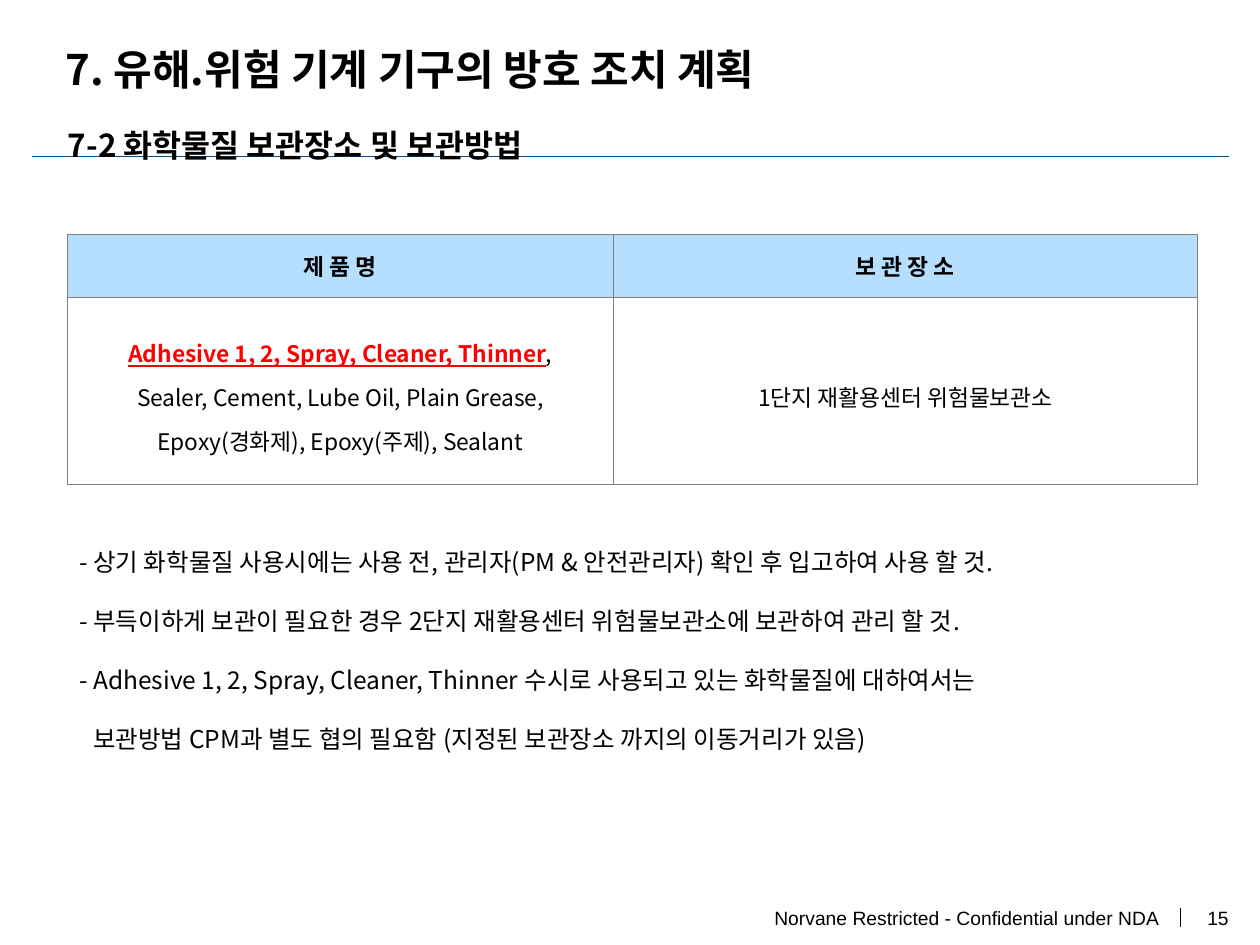
from lxml.etree import SubElement
from pptx import Presentation
from pptx.dml.color import RGBColor
from pptx.enum.shapes import MSO_CONNECTOR as Connector
from pptx.enum.text import MSO_ANCHOR as Anchor, PP_ALIGN as Align
from pptx.oxml.ns import qn
from pptx.util import Cm, Pt

COLORS = {"text": "000000", "rule": "005293", "header": "B6DFFF",
          "border": "808080", "alert": "FF0000"}
KOREAN = "Noto Sans CJK KR"


def style(paragraph, size, bold=False, align=Align.LEFT, spacing=None, name=KOREAN):
    paragraph.alignment = align
    if spacing:
        paragraph.line_spacing = spacing
    font = paragraph.font
    font.size, font.bold, font.name = Pt(size), bold, name
    font.color.rgb = RGBColor.from_string(COLORS["text"])
    properties = paragraph._p.find(".//" + qn("a:defRPr"))
    SubElement(properties, qn("a:ea"), typeface=name)


def add_text(slide, box, lines, size, **options):
    shape = slide.shapes.add_textbox(*[Cm(value) for value in box])
    frame = shape.text_frame
    frame.word_wrap = True
    frame.text = "\n".join(lines)
    for paragraph in frame.paragraphs:
        style(paragraph, size, **options)
    return frame


presentation = Presentation()
presentation.slide_width, presentation.slide_height = Cm(25.4), Cm(19.05)
slide = presentation.slides.add_slide(presentation.slide_layouts[5])

# Header rule and footer divider
for x1, y1, x2, y2, color, width in [
    (0.64, 3.15, 24.77, 3.15, "rule", 0.75),
    (23.8, 18.31, 23.8, 18.69, "text", 1),
]:
    line = slide.shapes.add_connector(Connector.STRAIGHT, Cm(x1), Cm(y1), Cm(x2), Cm(y2))
    line.line.color.rgb = RGBColor.from_string(COLORS[color])
    line.line.width = Pt(width)
    SubElement(line._element.spPr, qn("a:effectLst"))

# Title and subtitle
title = slide.shapes.title
title.left, title.top, title.width, title.height = Cm(1.07), Cm(0.74), Cm(16.87), Cm(1.3)
title.text_frame.text = "7. 유해.위험 기계 기구의 방호 조치 계획"
title.text_frame.vertical_anchor = Anchor.MIDDLE
style(title.text_frame.paragraphs[0], 24, bold=True)
add_text(slide, (1.12, 2.03, 16.81, 1.27), ["7-2 화학물질 보관장소 및 보관방법"],
         18, bold=True, spacing=1.5)

# Storage table
rows = [
    ["제 품 명", "보 관 장 소"],
    ["Adhesive 1, 2, Spray, Cleaner, Thinner,\n"
     "Sealer, Cement, Lube Oil, Plain Grease,\n"
     "Epoxy(경화제), Epoxy(주제), Sealant",
     "1단지 재활용센터 위험물보관소"],
]
table = slide.shapes.add_table(2, 2, Cm(1.35), Cm(4.72), Cm(22.78), Cm(5.05)).table
for column, width in zip(table.columns, (11.02, 11.76)):
    column.width = Cm(width)
for row, height in zip(table.rows, (1.27, 3.78)):
    row.height = Cm(height)

for row_index, texts in enumerate(rows):
    is_header = row_index == 0
    for column_index, text in enumerate(texts):
        cell = table.cell(row_index, column_index)
        cell.text = text
        cell.vertical_anchor = Anchor.MIDDLE
        for paragraph in cell.text_frame.paragraphs:
            style(paragraph, 13, bold=is_header, align=Align.CENTER,
                  spacing=None if is_header else Pt(25))
        # Borders come before the fill in the cell properties
        properties = cell._tc.get_or_add_tcPr()
        for side in ("lnL", "lnR", "lnT", "lnB"):
            border = SubElement(properties, qn(f"a:{side}"), w=str(Pt(0.25)))
            fill = SubElement(border, qn("a:solidFill"))
            SubElement(fill, qn("a:srgbClr"), val=COLORS["border"])
        if is_header:
            cell.fill.solid()
            cell.fill.fore_color.rgb = RGBColor.from_string(COLORS["header"])
        else:
            cell.fill.background()

# Highlighted products, with the closing comma left plain
products = table.cell(1, 0).text_frame.paragraphs[0]
highlight = products.runs[0]
highlight.text = highlight.text.rstrip(",")
highlight.font.bold = highlight.font.underline = True
highlight.font.color.rgb = RGBColor.from_string(COLORS["alert"])
products.add_run().text = ","

# Storage rules
notes = add_text(slide, (1.35, 10.31, 22.78, 6.76), [
    "- 상기 화학물질 사용시에는 사용 전, 관리자(PM & 안전관리자) 확인 후 입고하여 사용 할 것.",
    "- 부득이하게 보관이 필요한 경우 2단지 재활용센터 위험물보관소에 보관하여 관리 할 것.",
    "- Adhesive 1, 2, Spray, Cleaner, Thinner 수시로 사용되고 있는 화학물질에 대하여서는",
    "보관방법 CPM과 별도 협의 필요함 (지정된 보관장소 까지의 이동거리가 있음)",
], 14, spacing=2.0)
notes.paragraphs[-1]._p.get_or_add_pPr().set("marL", str(Cm(0.28)))

# Footer
for box, text in [
    ((13.4, 18.13, 9.98, 0.74), "Norvane Restricted - Confidential under NDA"),
    ((23.47, 18.13, 1.3, 0.74), "15"),
]:
    footer = add_text(slide, box, [text], 11, align=Align.RIGHT, name="Arial")
    footer.margin_left = footer.margin_right = 0
    footer.vertical_anchor = Anchor.MIDDLE

presentation.save("out.pptx")
